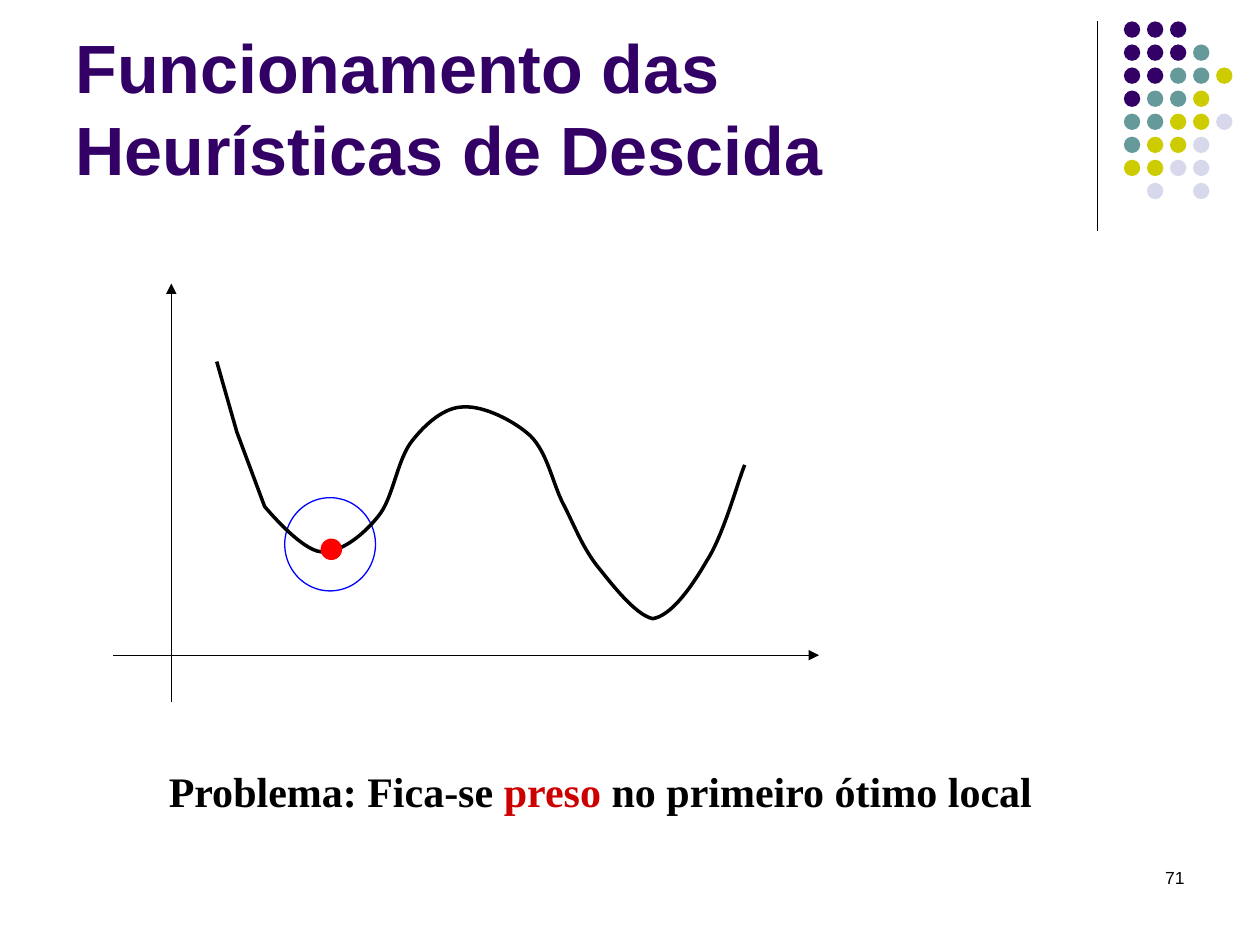
from typing import NamedTuple

from lxml import etree
from pptx import Presentation
from pptx.dml.color import RGBColor
from pptx.enum import shapes, text
from pptx.oxml.ns import qn
from pptx.util import Inches, Pt

COLORS = {
    "black": "000000", "white": "FFFFFF", "blue": "0000FF", "red": "FF0000",
    "accent": "CC0000", "purple": "330066", "teal": "669999",
    "olive": "CCCC00", "lilac": "D8D8EC",
}
DOT_COLORS = {"P": "purple", "T": "teal", "O": "olive", "L": "lilac"}
DOT_ROWS = ["PPP", "PPPT", "PPTTO", "PTTO", "TTOOL", "TOOL", "OOLL", " L L"]
DOT_LEFT, DOT_TOP, DOT_STEP, DOT_SIZE = 8.92, 0.17, 0.183, 0.13


class Run(NamedTuple):
    text: str
    color: str = "black"


class Line(NamedTuple):
    start: tuple[float, float]
    end: tuple[float, float]
    arrow: bool = False


LINES = [
    Line((8.71, 0.17), (8.71, 1.83)),
    Line((1.36, 5.57), (1.36, 2.25), arrow=True),
    Line((0.9, 5.2), (6.5, 5.2), arrow=True),
]

CURVE_START = (1.72, 2.87)
# Each segment: two control points and an end point
CURVE = [
    ((1.72, 2.87), (1.88, 3.43), (1.88, 3.43)),
    ((1.88, 3.43), (2.1, 4.02), (2.1, 4.02)),
    ((2.1, 4.02), (2.39, 4.37), (2.55, 4.38)),
    ((2.7, 4.39), (2.88, 4.25), (3, 4.1)),
    ((3.12, 3.96), (3.15, 3.65), (3.27, 3.5)),
    ((3.38, 3.36), (3.53, 3.23), (3.68, 3.23)),
    ((3.84, 3.22), (4.08, 3.34), (4.21, 3.46)),
    ((4.34, 3.59), (4.38, 3.81), (4.46, 3.98)),
    ((4.55, 4.15), (4.61, 4.32), (4.73, 4.48)),
    ((4.85, 4.63), (5.04, 4.88), (5.18, 4.91)),
    ((5.31, 4.89), (5.46, 4.71), (5.61, 4.45)),
    ((5.74, 4.25), (5.85, 3.84), (5.91, 3.69)),
]


def rgb(name: str) -> RGBColor:
    return RGBColor.from_string(COLORS[name])


def add_ellipse(s, x: float, y: float, w: float, h: float, fill: str, line: str | None = None):
    sp = s.shapes.add_shape(shapes.MSO_SHAPE.OVAL, Inches(x), Inches(y), Inches(w), Inches(h))
    sp.shadow.inherit = False
    sp.fill.solid()
    sp.fill.fore_color.rgb = rgb(fill)
    if line:
        sp.line.color.rgb = rgb(line)
        sp.line.width = Pt(0.75)
    else:
        sp.line.fill.background()


def add_line(s, line: Line):
    cx = s.shapes.add_connector(shapes.MSO_CONNECTOR.STRAIGHT,
                                *map(Inches, line.start), *map(Inches, line.end))
    cx.line.color.rgb = rgb("black")
    cx.line.width = Pt(0.75)
    if line.arrow:
        etree.SubElement(cx.line._get_or_add_ln(), qn("a:tailEnd"), type="triangle")
    etree.SubElement(cx._element.spPr, qn("a:effectLst"))


def add_curve(s):
    """Build the outline through the end points, then bend each side into a cubic curve."""
    fb = s.shapes.build_freeform(*map(Inches, CURVE_START))
    fb.add_line_segments([tuple(map(Inches, seg[-1])) for seg in CURVE], close=False)
    sp = fb.convert_to_shape()
    sides = list(sp._element.iter(qn("a:lnTo")))
    for side, segment in zip(sides, CURVE):
        bend = etree.Element(qn("a:cubicBezTo"))
        for x, y in segment:
            etree.SubElement(bend, qn("a:pt"),
                             x=str(Inches(x) - sp.left), y=str(Inches(y) - sp.top))
        side.getparent().replace(side, bend)
    sp.shadow.inherit = False
    sp.fill.background()
    sp.line.color.rgb = rgb("black")
    sp.line.width = Pt(2)


def add_text(s, x: float, y: float, w: float, h: float, lines: list[list[Run]], *,
             size: float, font: str = "Arial", bold: bool = False,
             align=text.PP_ALIGN.LEFT, anchor=text.MSO_ANCHOR.TOP):
    tf = s.shapes.add_textbox(Inches(x), Inches(y), Inches(w), Inches(h)).text_frame
    tf.word_wrap = True
    tf.vertical_anchor = anchor
    p = tf.paragraphs[0]
    p.alignment = align
    p.font.size = Pt(size)
    for i, runs in enumerate(lines):
        if i:
            p.add_line_break()
        for run in runs:
            r = p.add_run()
            r.text = run.text
            r.font.name = font
            r.font.size = Pt(size)
            r.font.bold = bold
            r.font.color.rgb = rgb(run.color)


def main():
    prs = Presentation()
    prs.slide_width, prs.slide_height = Inches(10), Inches(7.5)
    s = prs.slides.add_slide(prs.slide_layouts[6])

    for row, codes in enumerate(DOT_ROWS):
        for col, code in enumerate(codes):
            if code in DOT_COLORS:
                add_ellipse(s, DOT_LEFT + col * DOT_STEP, DOT_TOP + row * DOT_STEP,
                            DOT_SIZE, DOT_SIZE, DOT_COLORS[code])

    add_text(s, 0.5, 0.13, 8.25, 1.42,
             [[Run("Funcionamento das ", "purple")], [Run("Heurísticas de Descida", "purple")]],
             size=39, bold=True, anchor=text.MSO_ANCHOR.BOTTOM)

    add_ellipse(s, 2.26, 3.95, 0.72, 0.74, "white", "blue")
    for line in LINES:
        add_line(s, line)
    add_curve(s)
    add_ellipse(s, 2.55, 4.28, 0.16, 0.16, "red", "red")

    add_text(s, 0.35, 6.03, 8.83, 0.5,
             [[Run("Problema: Fica-se "), Run("preso", "accent"),
               Run(" no primeiro ótimo local")]],
             size=24, font="Times New Roman", bold=True, align=text.PP_ALIGN.CENTER)
    add_text(s, 7.17, 6.83, 2.33, 0.5, [[Run("71")]], size=10, align=text.PP_ALIGN.RIGHT)

    prs.save("out.pptx")


if __name__ == "__main__":
    main()
